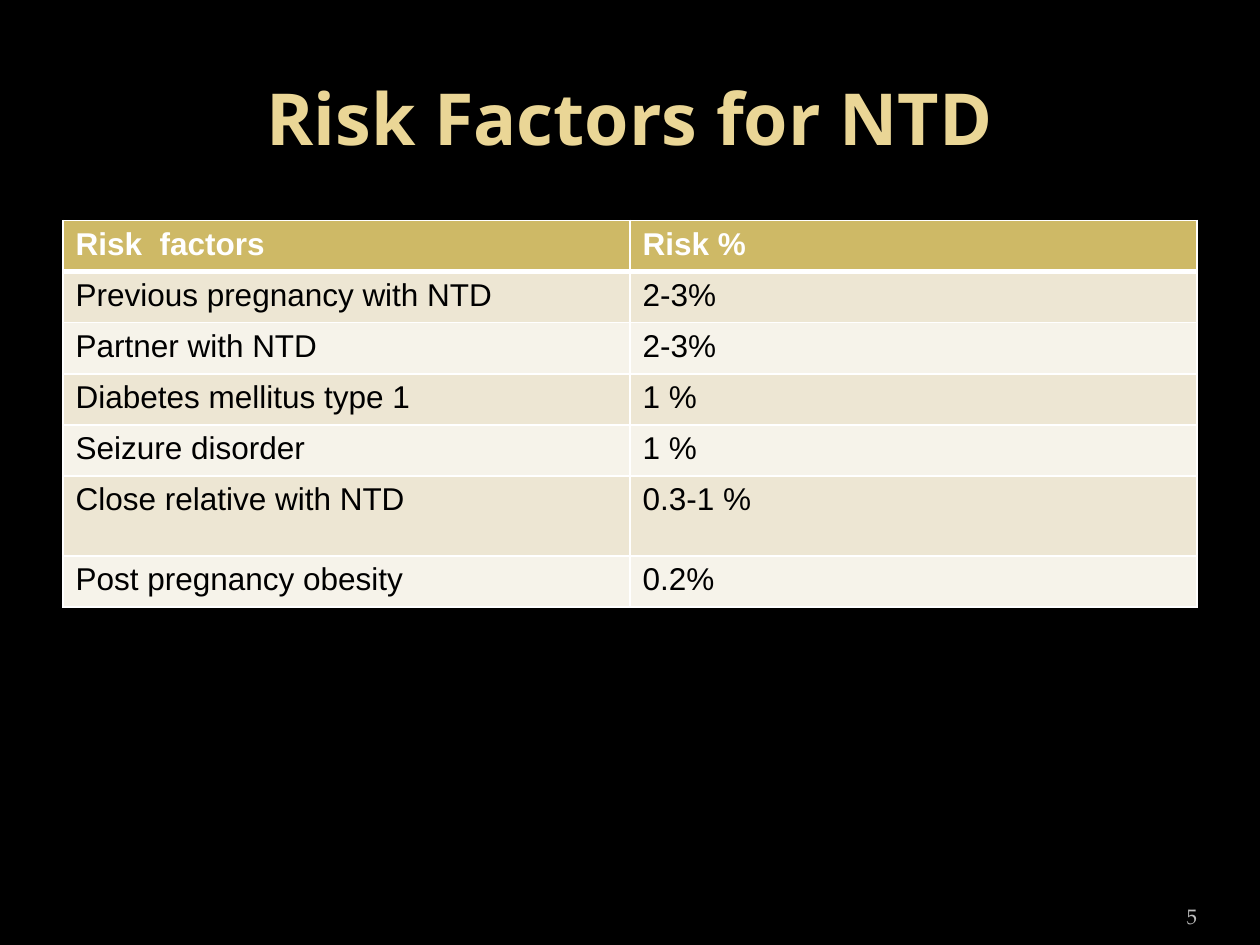
import pptx
import pptx.util
import pptx.dml.color
import pptx.enum.text
import pptx.oxml
import pptx.oxml.ns

Pt = pptx.util.Pt
RGB = pptx.dml.color.RGBColor.from_string
Anchor = pptx.enum.text.MSO_ANCHOR
Align = pptx.enum.text.PP_ALIGN

COLORS = {
    "background": "000000",
    "title": "EAD696",
    "header": "CEB966",
    "odd_row": "EDE6D3",
    "even_row": "F6F3EA",
    "header_text": "FFFFFF",
    "body_text": "000000",
    "border": "FFFFFF",
    "page_number": "BDBDBD",
}
RISKS = [
    ("Risk  factors", "Risk %"),
    ("Previous pregnancy with NTD", "2-3%"),
    ("Partner with NTD", "2-3%"),
    ("Diabetes mellitus type 1", "1 %"),
    ("Seizure disorder", "1 %"),
    ("Close relative with NTD", "0.3-1 %"),
    ("Post pregnancy obesity", "0.2%"),
]
ROW_HEIGHT = 29.2
TALL_ROW_HEIGHT = 45.7
TALL_ROW = 5


def style_text(frame, font_name, size, color, bold=False, align=Align.LEFT):
    paragraph = frame.paragraphs[0]
    paragraph.alignment = align
    font = paragraph.runs[0].font
    font.name = font_name
    font.size = Pt(size)
    font.bold = bold
    font.color.rgb = RGB(COLORS[color])


def add_border(cell, side, width):
    cell._tc.get_or_add_tcPr().append(pptx.oxml.parse_xml(
        f'<a:{side} {pptx.oxml.ns.nsdecls("a")} w="{Pt(width)}">'
        f'<a:solidFill><a:srgbClr val="{COLORS["border"]}"/></a:solidFill></a:{side}>'
    ))


deck = pptx.Presentation()
deck.slide_width = Pt(720)
deck.slide_height = Pt(540)
slide = deck.slides.add_slide(deck.slide_layouts[6])
slide.background.fill.solid()
slide.background.fill.fore_color.rgb = RGB(COLORS["background"])

title = slide.shapes.add_textbox(Pt(36), Pt(21.6), Pt(648), Pt(90)).text_frame
title.word_wrap = True
title.vertical_anchor = Anchor.MIDDLE
title.text = "Risk Factors for NTD"
style_text(title, "Open Sans", 41, "title", bold=True, align=Align.CENTER)

table_height = ROW_HEIGHT * (len(RISKS) - 1) + TALL_ROW_HEIGHT
risk_table = slide.shapes.add_table(
    len(RISKS), 2, Pt(36), Pt(126), Pt(648), Pt(table_height)
).table

for row, risk in enumerate(RISKS):
    risk_table.rows[row].height = Pt(TALL_ROW_HEIGHT if row == TALL_ROW else ROW_HEIGHT)
    is_header = row == 0
    fill = "header" if is_header else "odd_row" if row % 2 else "even_row"
    for column, wording in enumerate(risk):
        cell = risk_table.cell(row, column)
        add_border(cell, "lnL", 1)
        add_border(cell, "lnR", 1)
        add_border(cell, "lnT", 3 if row == 1 else 1)
        add_border(cell, "lnB", 3 if is_header else 1)
        cell.fill.solid()
        cell.fill.fore_color.rgb = RGB(COLORS[fill])
        cell.text_frame.text = wording
        style_text(cell.text_frame, "Arial", 18,
                   "header_text" if is_header else "body_text", bold=is_header)

page_number = slide.shapes.add_textbox(Pt(624), Pt(505.5), Pt(60), Pt(28.8)).text_frame
page_number.word_wrap = True
page_number.vertical_anchor = Anchor.BOTTOM
page_number.margin_left = page_number.margin_right = Pt(0)
page_number.text = "5"
style_text(page_number, "TeX Gyre Pagella", 12, "page_number", align=Align.RIGHT)

deck.save("out.pptx")
